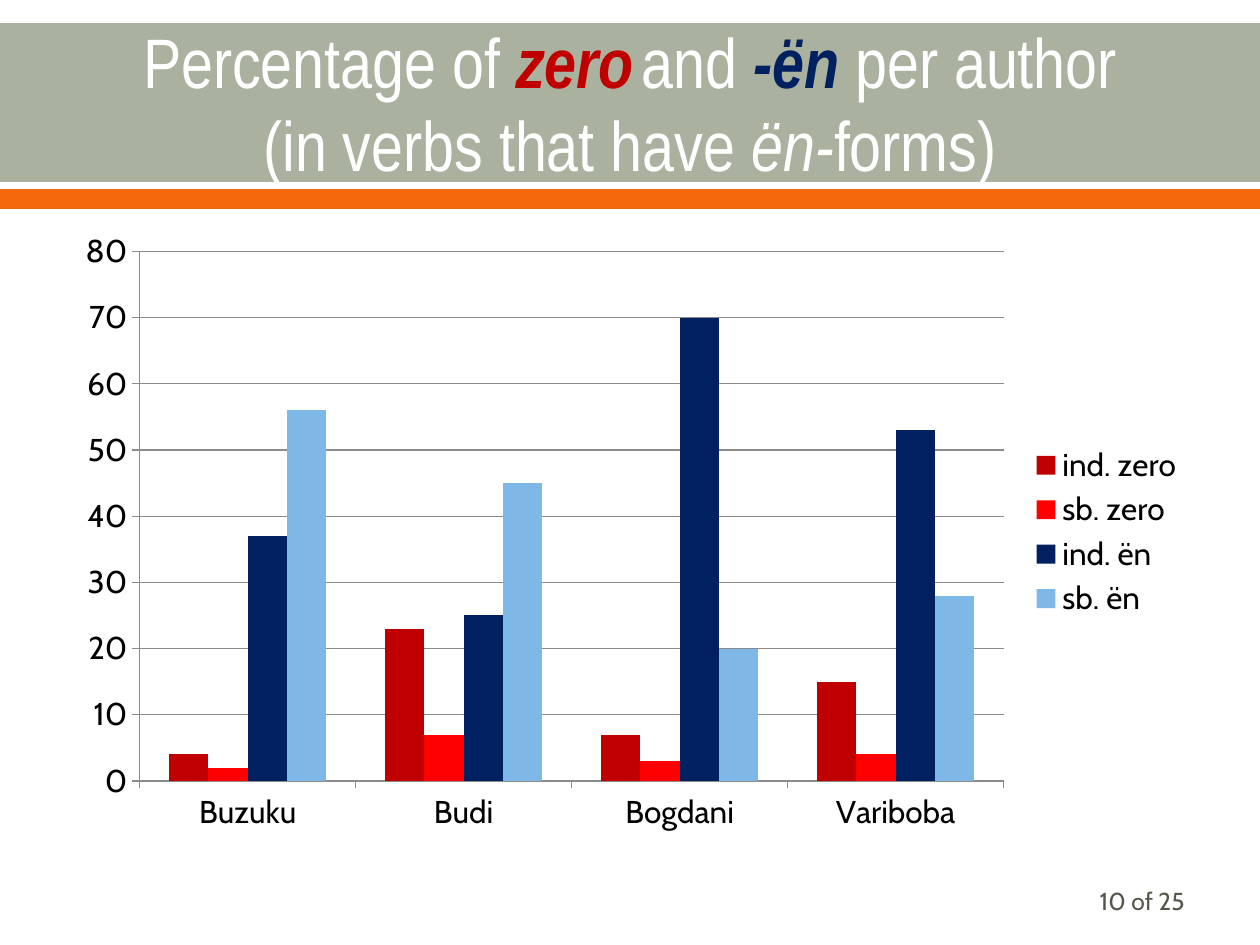
from lxml.etree import SubElement
from pptx import Presentation
from pptx.chart.data import CategoryChartData
from pptx.dml.color import RGBColor
from pptx.enum.chart import XL_CHART_TYPE as ChartType, XL_LEGEND_POSITION as LegendPosition, XL_TICK_MARK as Tick
from pptx.enum.shapes import MSO_SHAPE as Shape
from pptx.enum.text import MSO_ANCHOR as Anchor, MSO_AUTO_SIZE as AutoSize, PP_ALIGN as Align
from pptx.util import Pt

COLORS = {
    "sage": "ABB19F", "orange": "F4680B", "white": "FFFFFF", "black": "000000",
    "crimson": "C00000", "red": "FF0000", "navy": "002060", "sky": "7EB8E7",
    "grid": "8B8B8B", "gray": "55554A",
}
HEADING_FONT, BODY_FONT = "Arial Narrow", "Cabin"
BANDS = [("sage", 23, 159), ("orange", 189, 20)]
TITLE_LINES = [
    [("Percentage of ", "white", False, False), ("zero", "crimson", True, True),
     (" ", "white", False, False), ("and ", "white", False, False),
     ("-ën ", "navy", True, True), ("per author", "white", False, False)],
    [("(in verbs that have ", "white", False, False), ("ën-", "white", False, True),
     ("forms)", "white", False, False)],
]
AUTHORS = ["Buzuku", "Budi", "Bogdani", "Variboba"]
FORMS = [
    ("ind. zero", "crimson", [4, 23, 7, 15]),
    ("sb. zero", "red", [2, 7, 3, 4]),
    ("ind. ën", "navy", [37, 25, 70, 53]),
    ("sb. ën", "sky", [56, 45, 20, 28]),
]
PAGE_NUMBER = "10 of 25"
WIDTH, HEIGHT = 1260, 945
MARGIN = 63


def px(length):
    return length * 914400 // 126


def box(left, top, width, height):
    return [px(length) for length in (left, top, width, height)]


def color(name):
    return RGBColor.from_string(COLORS[name])


def style(font, face, size, color_name, bold=False, italic=False):
    font.name, font.size = face, Pt(size)
    font.bold, font.italic = bold, italic
    font.color.rgb = color(color_name)


def add_bands(slide):
    for name, top, height in BANDS:
        band = slide.shapes.add_shape(Shape.RECTANGLE, *box(0, top, WIDTH, height))
        band.shadow.inherit = False
        band.fill.solid()
        band.fill.fore_color.rgb = color(name)
        band.line.fill.background()


def fill_title(slide):
    title = slide.shapes.title
    title.left, title.top, title.width, title.height = box(MARGIN, 25, WIDTH - 2 * MARGIN, 154)
    title.element.getparent().append(title.element)
    frame = title.text_frame
    frame.auto_size, frame.vertical_anchor = AutoSize.NONE, Anchor.MIDDLE
    heading = frame.paragraphs[0]
    heading.alignment = Align.CENTER
    for number, line in enumerate(TITLE_LINES):
        if number:
            heading.add_line_break()
        for text, color_name, bold, italic in line:
            run = heading.add_run()
            run.text = text
            face, size = (HEADING_FONT, 40) if text.strip() else (BODY_FONT, 20)
            style(run.font, face, size, color_name, bold, italic)


def add_percentages(slide):
    data = CategoryChartData()
    data.categories = AUTHORS
    for name, _, values in FORMS:
        data.add_series(name, values)
    chart = slide.shapes.add_chart(
        ChartType.COLUMN_CLUSTERED, *box(MARGIN, 220, WIDTH - 2 * MARGIN, 624), data).chart
    style(chart.font, BODY_FONT, 18, "black")
    chart.has_title = False
    chart.has_legend = True
    chart.legend.position = LegendPosition.RIGHT
    chart.legend.include_in_layout = False
    percent = chart.value_axis
    percent.minimum_scale, percent.maximum_scale, percent.major_unit = 0, 80, 10
    percent.has_major_gridlines = True
    for axis in (chart.category_axis, percent):
        axis.major_tick_mark = Tick.OUTSIDE
    for part in (chart.category_axis, percent, percent.major_gridlines):
        part.format.line.color.rgb = color("grid")
        part.format.line.width = Pt(0.75)
    plot = chart.plots[0]
    plot.gap_width, plot.overlap, plot.vary_by_categories = 150, 0, False
    for series, (_, color_name, _) in zip(plot.series, FORMS):
        series.format.fill.solid()
        series.format.fill.fore_color.rgb = color(color_name)


def add_page_number(slide):
    frame = slide.shapes.add_textbox(*box(903, 876, 294, 50)).text_frame
    frame.word_wrap, frame.vertical_anchor = True, Anchor.MIDDLE
    frame.text = PAGE_NUMBER
    footer = frame.paragraphs[0]
    footer.alignment = Align.RIGHT
    style(footer.runs[0].font, BODY_FONT, 14, "gray")


def main():
    deck = Presentation()
    deck.slide_width, deck.slide_height = px(WIDTH), px(HEIGHT)
    slide = deck.slides.add_slide(deck.slide_layouts[5])
    add_bands(slide)
    fill_title(slide)
    add_percentages(slide)
    add_page_number(slide)
    deck.save("out.pptx")


if __name__ == "__main__":
    main()
